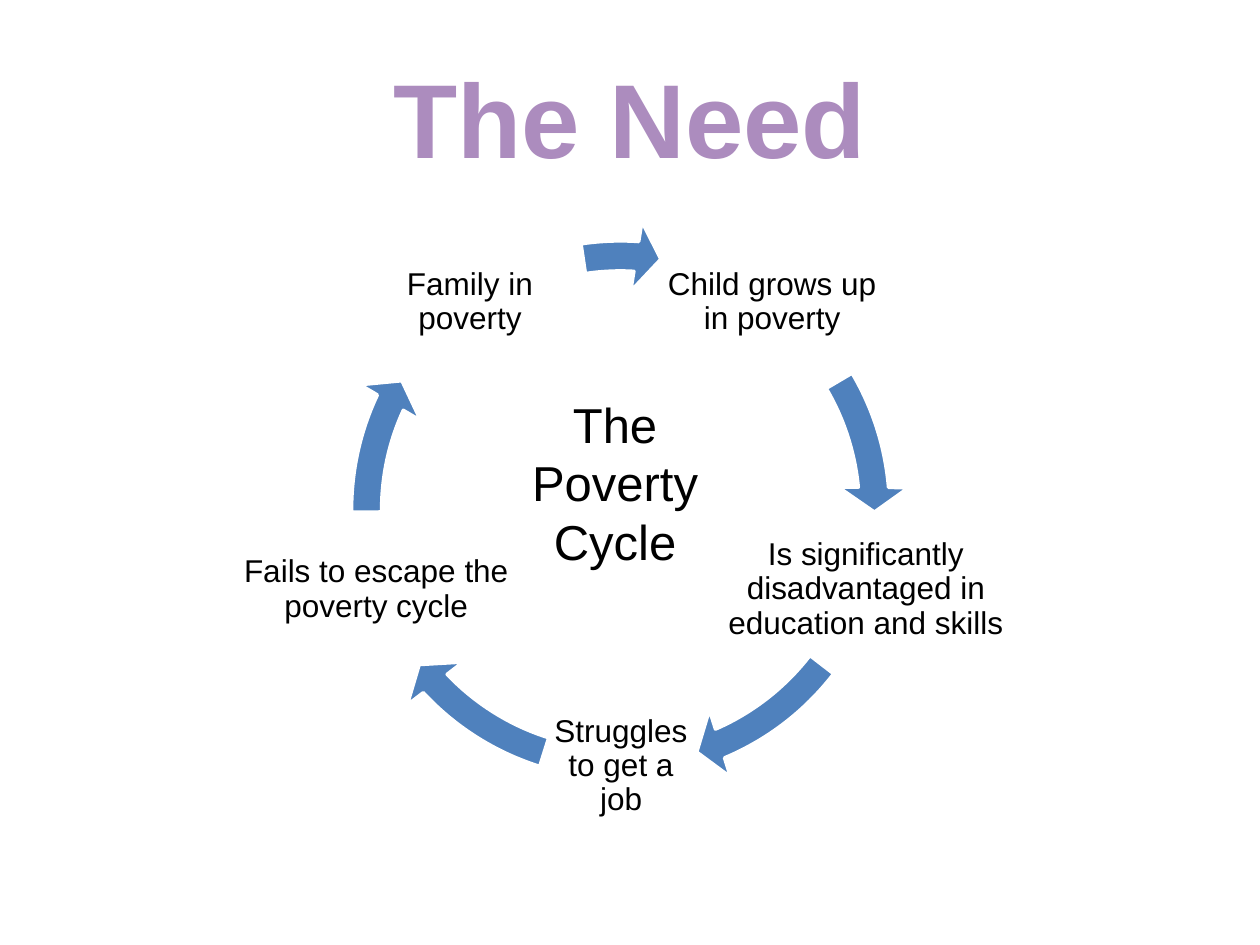
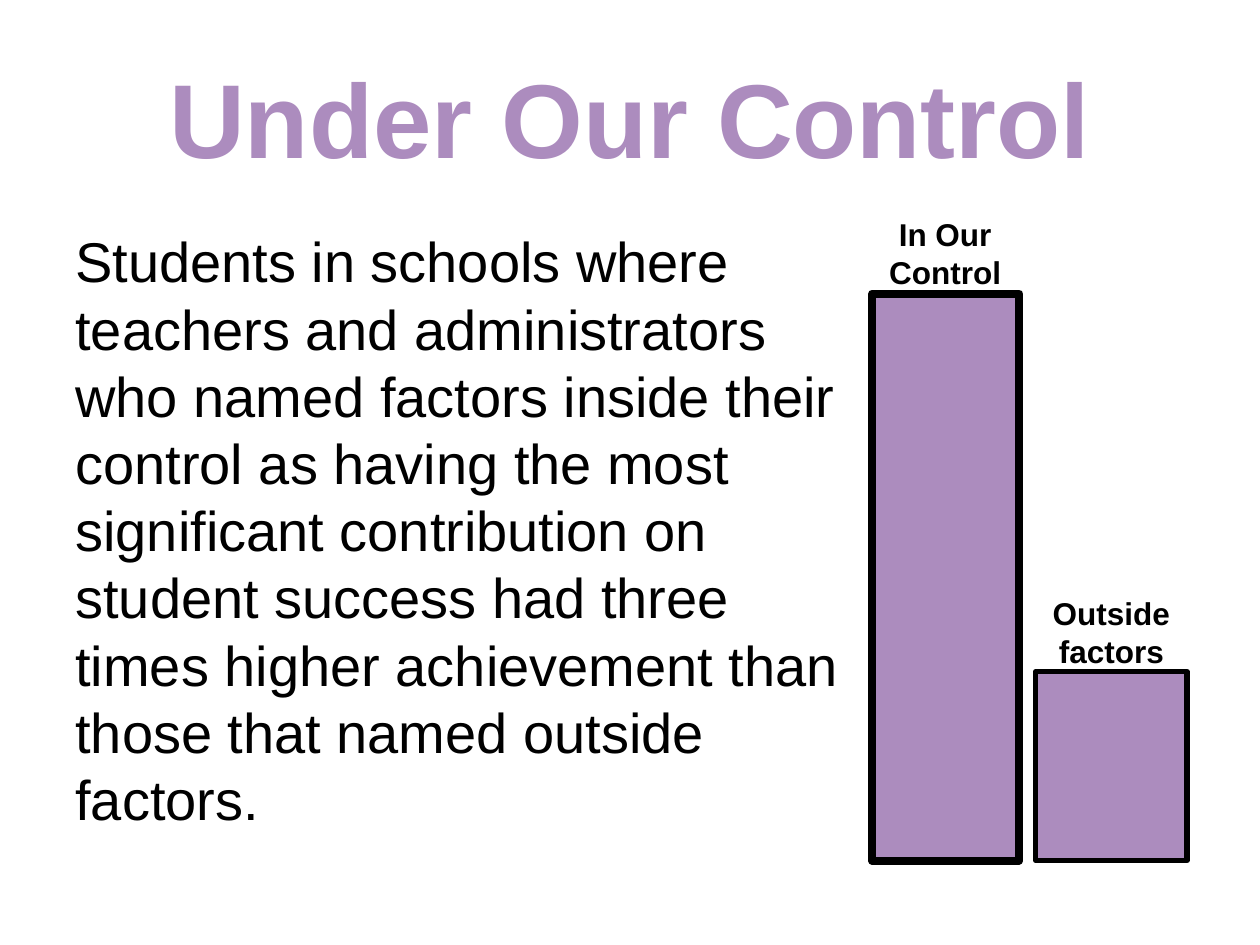
from dataclasses import dataclass
from pptx import Presentation
from pptx.dml.color import RGBColor
from pptx.enum.shapes import MSO_SHAPE
from pptx.enum.text import MSO_ANCHOR, PP_ALIGN
from pptx.util import Cm, Pt


@dataclass(frozen=True)
class Theme:
    font: str = "Arial"
    purple: RGBColor = RGBColor(0xAC, 0x8C, 0xBE)
    blue: RGBColor = RGBColor(0x4F, 0x81, 0xBD)
    black: RGBColor = RGBColor(0, 0, 0)
    white: RGBColor = RGBColor(255, 255, 255)
    title: int = 60
    body: int = 32
    center: int = 28
    label: int = 18


T = Theme()


def add_text(s, text, box, size, color=T.black, bold=False, align=PP_ALIGN.CENTER,
             anchor=MSO_ANCHOR.TOP, inset=None, line=None, before=None, after=None):
    tf = s.shapes.add_textbox(*map(Cm, box)).text_frame
    tf.word_wrap = True
    tf.vertical_anchor = anchor
    if inset is not None:
        tf.margin_left = tf.margin_right = tf.margin_top = tf.margin_bottom = Cm(inset)
    p = tf.paragraphs[0]
    p.text = text
    p.alignment = align
    p.line_spacing = line
    p.space_before = before
    p.space_after = after
    for r in p.runs:
        r.font.name = T.font
        r.font.size = Pt(size)
        r.font.bold = bold
        r.font.color.rgb = color


def add_shape(s, kind, box, fill, line, width):
    sp = s.shapes.add_shape(kind, *map(Cm, box))
    sp.shadow.inherit = False
    sp.fill.solid()
    sp.fill.fore_color.rgb = fill
    sp.line.color.rgb = line
    sp.line.width = Pt(width)
    return sp


prs = Presentation()
prs.slide_width, prs.slide_height = Cm(25.4), Cm(19.05)

slides = []
for title in ("The Need", "Under Our Control"):
    s = prs.slides.add_slide(prs.slide_layouts[6])
    add_text(s, title, (1.27, 0.76, 22.86, 3.18), T.title, T.purple, bold=True,
             anchor=MSO_ANCHOR.MIDDLE)
    slides.append(s)
need, control = slides

step_height = 3.1
ring = (6.68, 4.45, 11.66, 11.66)
steps = [
    ("Child grows up in poverty", 13.34, 4.55, 4.45, 329.43, 354.9),
    ("Is significantly disadvantaged in education and skills", 14.33, 10.34, 6.25, 37.55, 66.93),
    ("Struggles to get a job", 10.97, 13.89, 3.1, 107.48, 136.86),
    ("Fails to escape the poverty cycle", 4.83, 10.34, 5.51, 179.5, 204.98),
    ("Family in poverty", 7.19, 4.55, 4.57, 261.55, 273.56),
]
for text, x, y, w, start, end in steps:
    add_text(need, text, (x, y, w, step_height), T.label, anchor=MSO_ANCHOR.MIDDLE,
             inset=0.08, line=0.9, after=Pt(T.label * 0.35))
    arrow = add_shape(need, MSO_SHAPE.CIRCULAR_ARROW, ring, T.blue, T.white, 2)
    arrow.adjustments[0] = 0.052
    arrow.adjustments[4] = 0.061
    for i, degrees in enumerate((5.6, end, start), 1):
        arrow.adjustments[i] = degrees * 0.6
add_text(need, "The\nPoverty\nCycle", (9.96, 7.82, 4.88, 3.84), T.center)

add_text(control, "Students in schools where teachers and administrators who named factors "
         "inside their control as having the most significant contribution on student "
         "success had three times higher achievement than those that named outside factors.",
         (1.27, 4.45, 16.31, 12.57), T.body, align=PP_ALIGN.LEFT, before=Pt(T.body * 0.2))

base = 17.35
bars = [
    ("In Our\nControl", 17.58, 2.97, 11.43, 4.5, 17.53, 4.22),
    ("Outside\nfactors", 20.88, 3.05, 3.81, 3, 20.88, 11.86),
]
for text, x, w, h, border, label_x, label_y in bars:
    add_shape(control, MSO_SHAPE.RECTANGLE, (x, base - h, w, h), T.purple, T.black, border)
    add_text(control, text, (label_x, label_y, 3.05, 1.8), T.label, bold=True)

prs.save("out.pptx")
